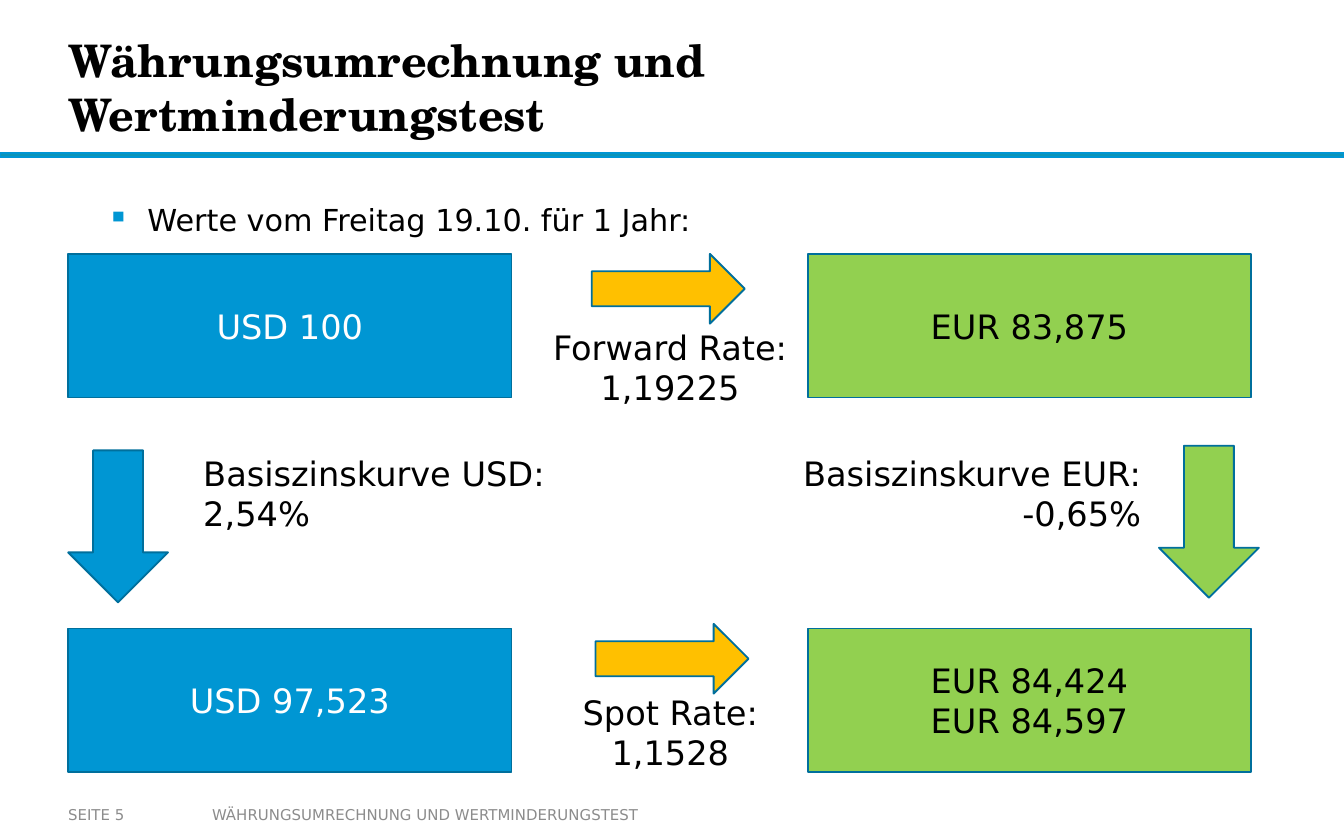
from pptx import Presentation
from pptx.dml.color import RGBColor
from pptx.enum.shapes import MSO_SHAPE
from pptx.enum.text import MSO_ANCHOR, MSO_AUTO_SIZE, PP_ALIGN
from pptx.oxml.ns import qn
from pptx.util import Pt
from lxml.etree import SubElement

THEME = {
    "blue": "0096D3", "green": "92D050", "amber": "FFC000", "rule": "0C94B7",
    "outline": "006F9C", "black": "000000", "white": "FFFFFF", "grey": "8C8C8C",
    "heading": "TeX Gyre Schola", "text": "DejaVu Sans",
    "title_size": 24, "bullet_size": 16.2, "label_size": 18, "footer_size": 8,
}

# Content
TITLE = "Währungsumrechnung und Wertminderungstest"
BULLET = "Werte vom Freitag 19.10. für 1 Jahr:"
FOOTERS = [("SEITE 5", 36.5, 70.5, 0), (TITLE.upper(), 106.5, 253.5, 7.2)]

# Grid: two columns of value boxes, two rows
LEFT, RIGHT, TOP, BOTTOM = 36.5, 432.7, 136, 336.7
BOX_WIDTH, BOX_HEIGHT = 237.6, 77
ACROSS, DOWN = (82, 37.4), (53.5, 81.4)

VALUES = [  # lines, left, top, fill, text colour
    (["USD 100"], LEFT, TOP, "blue", "white"),
    (["EUR 83,875"], RIGHT, TOP, "green", "black"),
    (["USD 97,523"], LEFT, BOTTOM, "blue", "white"),
    (["EUR 84,424", "EUR 84,597"], RIGHT, BOTTOM, "green", "black"),
]
ARROWS = [  # shape, left, top, size, fill
    (MSO_SHAPE.RIGHT_ARROW, 317, TOP, ACROSS, "amber"),
    (MSO_SHAPE.RIGHT_ARROW, 319, 334.2, ACROSS, "amber"),
    (MSO_SHAPE.DOWN_ARROW, LEFT, 241.3, DOWN, "blue"),
    (MSO_SHAPE.DOWN_ARROW, 620.9, 238.8, DOWN, "green"),
]
LABELS = [  # lines, left, top, width, alignment
    (["Forward Rate:", "1,19225"], 287, 171.5, 144, PP_ALIGN.CENTER),
    (["Spot Rate:", "1,1528"], 303, 367, 112.3, PP_ALIGN.CENTER),
    (["Basiszinskurve USD:", "2,54%"], 101.8, 239, 203, PP_ALIGN.LEFT),
    (["Basiszinskurve EUR:", "-0,65%"], 417.4, 239, 201, PP_ALIGN.RIGHT),
]


def color(name):
    return RGBColor.from_string(THEME[name])


def write(shape, lines, size, ink="black", font="text", bold=False,
          align=PP_ALIGN.LEFT, inset=(7.2, 3.6), **frame_format):
    frame = shape.text_frame
    side, edge = inset
    settings = {"word_wrap": True, "vertical_anchor": MSO_ANCHOR.MIDDLE,
                "margin_left": Pt(side), "margin_right": Pt(side),
                "margin_top": Pt(edge), "margin_bottom": Pt(edge)}
    for name, value in {**settings, **frame_format}.items():
        setattr(frame, name, value)
    for index, line in enumerate(lines):
        paragraph = frame.paragraphs[0] if index == 0 else frame.add_paragraph()
        paragraph.alignment = align
        run = paragraph.add_run()
        run.text = line
        run.font.color.rgb = color(ink)
        for name, value in {"name": THEME[font], "size": Pt(THEME[size]),
                            "bold": bold}.items():
            setattr(run.font, name, value)


def add_box(slide, kind, left, top, width, height, fill, line="outline"):
    shape = slide.shapes.add_shape(kind, Pt(left), Pt(top), Pt(width), Pt(height))
    shape.shadow.inherit = False
    shape.fill.solid()
    shape.fill.fore_color.rgb = color(fill)
    shape.line.color.rgb = color(line)
    shape.line.width = Pt(1)
    return shape


def add_text(slide, left, top, width, height):
    return slide.shapes.add_textbox(Pt(left), Pt(top), Pt(width), Pt(height))


def add_bullet(paragraph):
    properties = paragraph._p.get_or_add_pPr()
    properties.set("marL", str(Pt(42.5)))
    properties.set("indent", str(-Pt(21.6)))
    bullet_color = SubElement(properties, qn("a:buClr"))
    SubElement(bullet_color, qn("a:srgbClr")).set("val", THEME["blue"])
    SubElement(properties, qn("a:buChar")).set("char", "▪")
    paragraph.line_spacing = 0.9


def main():
    presentation = Presentation()
    presentation.slide_width, presentation.slide_height = Pt(720), Pt(450)
    slide = presentation.slides.add_slide(presentation.slide_layouts[5])

    # Title and rule
    title = slide.shapes.title
    for name, value in {"left": LEFT, "top": 10.8, "width": 538.6,
                        "height": 71.3}.items():
        setattr(title, name, Pt(value))
    write(title, [TITLE], "title_size", font="heading", bold=True, inset=(0, 0),
          auto_size=MSO_AUTO_SIZE.NONE)
    add_box(slide, MSO_SHAPE.RECTANGLE, 0, 82, 720, 2.2, "rule", "blue")

    # Bullet line
    bullet = add_text(slide, LEFT, 106.6, 611.3, 29.5)
    write(bullet, [BULLET], "bullet_size", inset=(0, 3.6),
          vertical_anchor=MSO_ANCHOR.TOP)
    add_bullet(bullet.text_frame.paragraphs[0])

    # Value boxes
    for lines, left, top, fill, ink in VALUES:
        box = add_box(slide, MSO_SHAPE.RECTANGLE, left, top,
                      BOX_WIDTH, BOX_HEIGHT, fill)
        write(box, lines, "label_size", ink, align=PP_ALIGN.CENTER)

    # Arrows and their labels
    for kind, left, top, size, fill in ARROWS:
        add_box(slide, kind, left, top, *size, fill)
    for lines, left, top, width, align in LABELS:
        write(add_text(slide, left, top, width, 51), lines, "label_size",
              align=align, word_wrap=False, vertical_anchor=MSO_ANCHOR.TOP,
              auto_size=MSO_AUTO_SIZE.SHAPE_TO_FIT_TEXT)

    # Footer
    for text, left, width, side in FOOTERS:
        write(add_text(slide, left, 426.2, width, 20), [text], "footer_size",
              "grey", inset=(side, 3.6))

    presentation.save("out.pptx")


if __name__ == "__main__":
    main()
